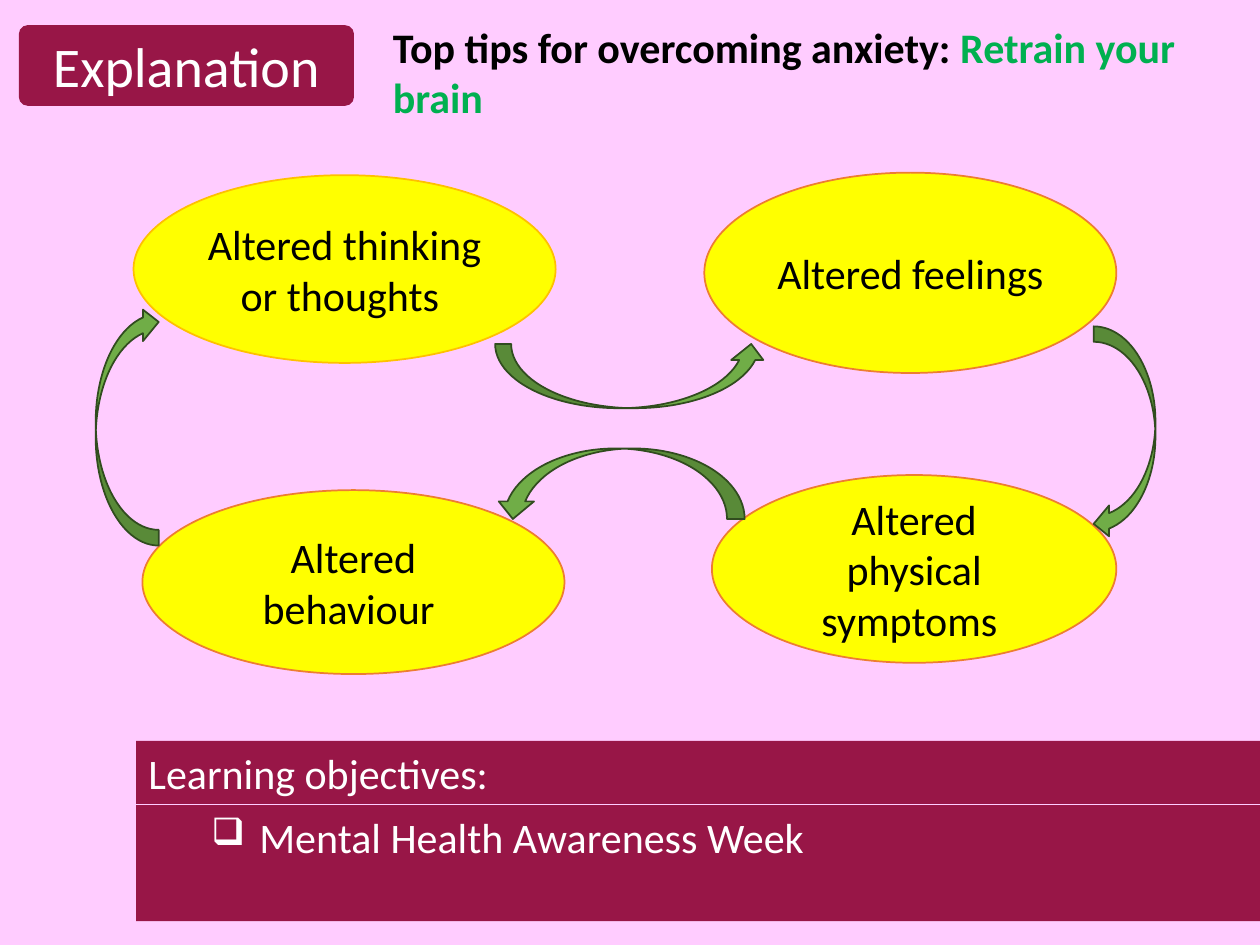
from lxml import etree
from pptx import Presentation
from pptx.dml.color import RGBColor
from pptx.enum.shapes import MSO_SHAPE as Shape
from pptx.enum.text import MSO_ANCHOR as Anchor, MSO_AUTO_SIZE as AutoSize, PP_ALIGN as Align
from pptx.oxml.ns import qn
from pptx.util import Inches, Pt

PINK = RGBColor(0xFF, 0xCC, 0xFF)
MAROON = RGBColor(0x98, 0x16, 0x47)
WHITE = RGBColor(0xFF, 0xFF, 0xFF)
BLACK = RGBColor(0, 0, 0)
GREEN_TEXT = RGBColor(0x00, 0xB0, 0x50)
YELLOW = RGBColor(0xFF, 0xFF, 0x00)
GOLD = RGBColor(0xFF, 0xC0, 0x00)
ORANGE = RGBColor(0xED, 0x7D, 0x31)
ARROW_GREEN = RGBColor(0x70, 0xAD, 0x47)
ARROW_EDGE = RGBColor(0x31, 0x4C, 0x1F)
FONT = "Calibri"

# Stage text, outline, and left, top, width, height within the diagram
STAGES = [
    ("Altered thinking or thoughts ", GOLD, (0.31, 0.02, 3.35, 1.49)),
    ("Altered feelings ", ORANGE, (4.84, 0, 3.27, 1.59)),
    ("Altered physical symptoms ", ORANGE, (4.9, 2.4, 3.21, 1.49)),
    ("Altered behaviour ", ORANGE, (0.38, 2.52, 3.35, 1.46)),
]
# Arrow kind, box within the diagram, rotation, vertical flip
ARROWS = [
    (Shape.CURVED_UP_ARROW, (3.18, 1.36, 2.16, 0.51), 0, False),
    (Shape.CURVED_LEFT_ARROW, (7.93, 1.22, 0.49, 1.69), 0, False),
    (Shape.CURVED_LEFT_ARROW, (3.89, 1.48, 0.56, 1.98), 270, True),
    (Shape.CURVED_DOWN_ARROW, (-0.69, 1.76, 1.9, 0.5), 270, False),
]


def add_filled_shape(slide, kind, box, fill, edge=None):
    shape = slide.shapes.add_shape(kind, *map(Inches, box))
    shape.shadow.inherit = False
    shape.fill.solid()
    shape.fill.fore_color.rgb = fill
    if edge is None:
        shape.line.fill.background()
    else:
        shape.line.color.rgb = edge
        shape.line.width = Pt(1)
    return shape


def add_run(paragraph, text, color, size=24, bold=False):
    run = paragraph.add_run()
    run.text = text
    run.font.name = FONT
    run.font.size = Pt(size)
    run.font.bold = bold
    run.font.color.rgb = color


def write_text(shape, text, color, size=24, align=Align.CENTER, anchor=Anchor.MIDDLE):
    frame = shape.text_frame
    frame.word_wrap = True
    frame.vertical_anchor = anchor
    paragraph = frame.paragraphs[0]
    paragraph.alignment = align
    add_run(paragraph, text, color, size)
    return paragraph


def add_box_bullet(paragraph):
    properties = paragraph._p.get_or_add_pPr()
    properties.set("marL", str(Inches(0.88)))
    properties.set("indent", str(Inches(-0.38)))
    etree.SubElement(properties, qn("a:buSzPct")).set("val", "90000")
    etree.SubElement(properties, qn("a:buChar")).set("char", "❑")


def add_objectives(slide, left, top, width, height):
    header_height, gap = 0.5, 0.01
    body_top = top + header_height + gap
    body = add_filled_shape(slide, Shape.RECTANGLE,
                            (left, body_top, width, top + height - body_top), MAROON)
    paragraph = write_text(body, "Mental Health Awareness Week", WHITE,
                           align=Align.LEFT, anchor=Anchor.TOP)
    paragraph.level = 1
    add_box_bullet(paragraph)
    header = add_filled_shape(slide, Shape.RECTANGLE,
                              (left, top, width, header_height), MAROON)
    write_text(header, "Learning objectives:", WHITE, align=Align.LEFT, anchor=Anchor.TOP)


def add_section_label(slide, *box):
    label = add_filled_shape(slide, Shape.ROUNDED_RECTANGLE, box, MAROON)
    label.adjustments[0] = 0.11
    write_text(label, "Explanation", WHITE, size=32)


def add_title(slide, *box):
    frame = slide.shapes.add_textbox(*map(Inches, box)).text_frame
    frame.word_wrap = True
    frame.auto_size = AutoSize.SHAPE_TO_FIT_TEXT
    paragraph = frame.paragraphs[0]
    add_run(paragraph, "Top tips for overcoming anxiety: ", BLACK, bold=True)
    add_run(paragraph, "Retrain your brain", GREEN_TEXT, bold=True)


def add_anxiety_cycle(slide, left, top):
    """Draw the four stages and the curved arrows that link them."""
    def place(box):
        x, y, width, height = box
        return left + x, top + y, width, height

    for text, edge, box in STAGES:
        stage = add_filled_shape(slide, Shape.OVAL, place(box), YELLOW, edge)
        write_text(stage, text, BLACK)
    for kind, box, rotation, flipped in ARROWS:
        arrow = add_filled_shape(slide, kind, place(box), ARROW_GREEN, ARROW_EDGE)
        arrow.rotation = rotation
        if flipped:
            arrow._element.spPr.find(qn("a:xfrm")).set("flipV", "1")


def main():
    presentation = Presentation()
    presentation.slide_width = Inches(10)
    presentation.slide_height = Inches(7.5)
    slide = presentation.slides.add_slide(presentation.slide_layouts[6])
    slide.background.fill.solid()
    slide.background.fill.fore_color.rgb = PINK
    add_objectives(slide, 1.08, 5.88, 8.92, 1.43)
    add_section_label(slide, 0.15, 0.2, 2.66, 0.64)
    add_title(slide, 3.02, 0.12, 6.59, 0.91)
    add_anxiety_cycle(slide, 0.75, 1.37)
    presentation.save("out.pptx")


if __name__ == "__main__":
    main()
